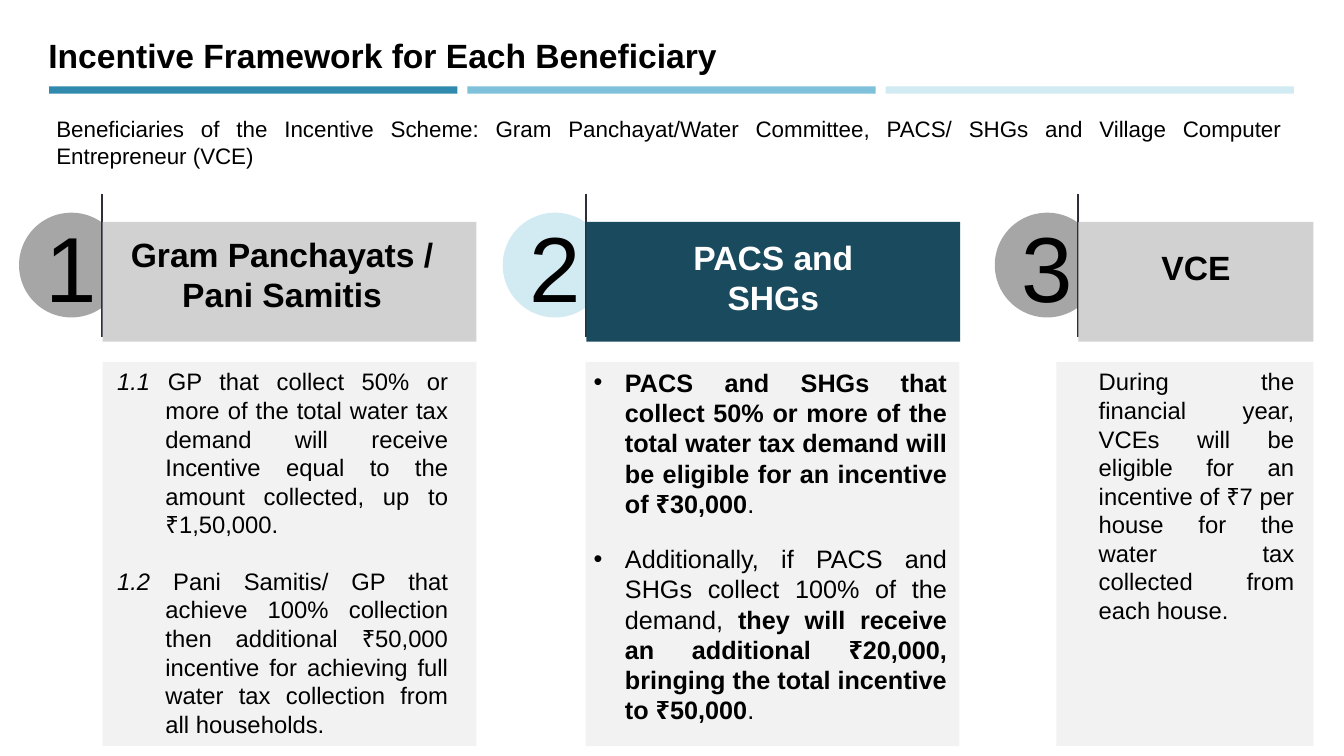
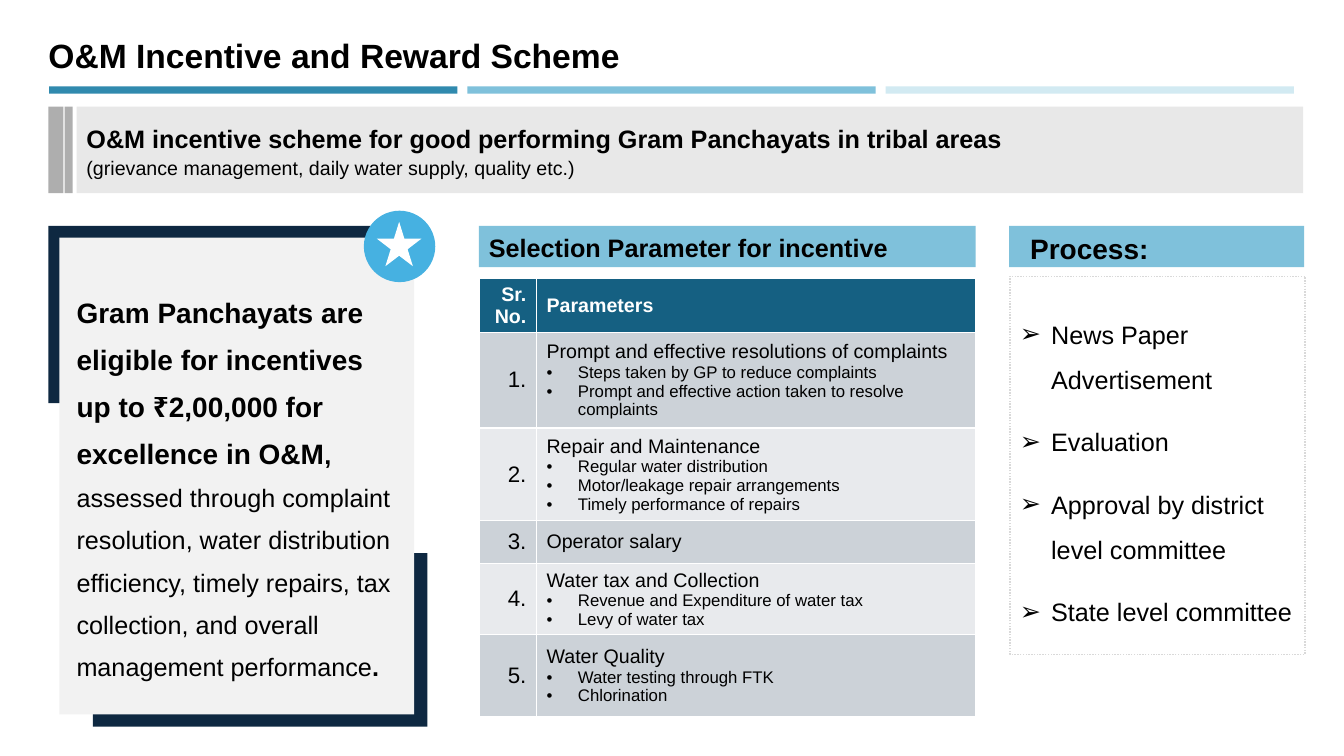
from math import copysign

from lxml import etree
from pptx import Presentation
from pptx import util as u
from pptx.dml import color as c
from pptx.enum import dml, shapes, text
from pptx.oxml import ns

INK, WHITE, PALE = "000000", "FFFFFF", "F2F2F2"
GREY, SILVER = "D1D1D1", "A6A6A6"
SKY, ICE = "7FC1DB", "D2EAF2"
BANDS = ["308AAE", SKY, ICE]
FONT = "Arial"
INSETS = (0.25, 0.13, 0.25, 0.13)
LEFT, CENTER, RIGHT, JUSTIFY = (
    text.PP_ALIGN.LEFT, text.PP_ALIGN.CENTER,
    text.PP_ALIGN.RIGHT, text.PP_ALIGN.JUSTIFY)
TOP, MIDDLE = text.MSO_ANCHOR.TOP, text.MSO_ANCHOR.MIDDLE
RECT, OVAL, STAR = (
    shapes.MSO_SHAPE.RECTANGLE, shapes.MSO_SHAPE.OVAL,
    shapes.MSO_SHAPE.STAR_5_POINT)


def rgb(code):
    return c.RGBColor.from_string(code)


def cm(*values):
    return [u.Cm(value) for value in values]


class Deck:
    def __init__(self):
        self.prs = Presentation()
        self.prs.slide_width, self.prs.slide_height = cm(33.87, 19.05)
        self.layout = self.prs.slide_layouts[1]
        self.place(self.layout.placeholders[0], 0.97, 0.74, 31.65, 1.27)
        self.slide = None

    def start_slide(self, heading):
        self.slide = self.prs.slides.add_slide(self.layout)
        frame = self.frame(self.slide.shapes.title.text_frame)
        self.paragraph(frame, heading, 24, bold=True)

    def share_bands(self):
        for index, fill in enumerate(BANDS):
            band = self.shape(1.24 + 10.54 * index, 2.18, 10.29, 0.18, fill)
            band.element.nvSpPr.cNvPr.set("id", str(20 + index))
            self.layout.shapes.element.append(band.element)

    def place(self, shape, x, y, w, h):
        shape.left, shape.top, shape.width, shape.height = cm(x, y, w, h)

    def paint(self, shape, fill):
        shape.fill.solid()
        shape.fill.fore_color.rgb = rgb(fill)

    def frame(self, frame, anchor=MIDDLE, insets=INSETS, wrap=True):
        frame.auto_size = text.MSO_AUTO_SIZE.NONE
        frame.word_wrap = wrap
        frame.vertical_anchor = anchor
        (frame.margin_left, frame.margin_top,
         frame.margin_right, frame.margin_bottom) = cm(*insets)
        return frame

    def shape(self, x, y, w, h, fill, kind=RECT):
        shape = self.slide.shapes.add_shape(kind, *cm(x, y, w, h))
        shape.shadow.inherit = False
        shape.line.fill.background()
        self.paint(shape, fill)
        return shape

    def box(self, x, y, w, h, fill, kind=RECT, **style):
        return self.frame(self.shape(x, y, w, h, fill, kind).text_frame, **style)

    def text_box(self, x, y, w, h):
        box = self.slide.shapes.add_textbox(*cm(x, y, w, h))
        return self.frame(box.text_frame, TOP)

    def body(self, x, y, w, h, fill=None, border=None, **style):
        body = self.slide.placeholders[1]
        self.place(body, x, y, w, h)
        if fill:
            self.paint(body, fill)
        if border:
            body.line.color.rgb = rgb(border)
            body.line.width = u.Pt(1)
            body.line.dash_style = dml.MSO_LINE.ROUND_DOT
        return self.frame(body.text_frame, **style)

    def rule(self, x, top, bottom):
        line = self.slide.shapes.add_connector(
            shapes.MSO_CONNECTOR.STRAIGHT, *cm(x, bottom, x, top))
        line.line.color.rgb = rgb("2E2E38")
        line.line.width = u.Pt(1.5)
        etree.SubElement(line.element.spPr, ns.qn("a:effectLst"))

    def bracket(self, x, y, w, h, fill):
        side, edge = copysign(1.14, w), copysign(0.56, h)
        corners = [(x + w, y), (x + w, y + edge), (x + side, y + edge),
                   (x + side, y + h), (x, y + h)]
        builder = self.slide.shapes.build_freeform(*cm(x, y))
        builder.add_line_segments([cm(*corner) for corner in corners])
        bracket = builder.convert_to_shape()
        bracket.shadow.inherit = False
        bracket.line.fill.background()
        self.paint(bracket, fill)

    def paragraph(self, frame, runs, size, bold=False, color=INK, align=LEFT,
                  spacing=1.0, before=0, after=0, hang=0, bullet=None):
        para = frame.paragraphs[-1]
        if para.runs:
            para = frame.add_paragraph()
        para.alignment = align
        para.line_spacing = spacing
        para.space_before, para.space_after = u.Pt(before), u.Pt(after)
        props = para._p.get_or_add_pPr()
        props.set("marL", str(u.Cm(hang)))
        props.set("indent", str(-u.Cm(hang)))
        if bullet:
            etree.SubElement(props, ns.qn("a:buFont")).set("typeface", FONT)
            etree.SubElement(props, ns.qn("a:buChar")).set("char", bullet)
        else:
            etree.SubElement(props, ns.qn("a:buNone"))
        for words, own in [(runs, {})] if isinstance(runs, str) else runs:
            run = para.add_run()
            run.text = words
            run.font.name = FONT
            run.font.size = u.Pt(own.get("size", size))
            run.font.bold = own.get("bold", bold)
            run.font.italic = own.get("italic", False)
            run.font.color.rgb = rgb(color)

    def table(self, x, y, widths, heights, header, rows):
        grid = self.slide.shapes.add_table(
            len(heights), len(widths),
            *cm(x, y, sum(widths), sum(heights))).table
        grid.horz_banding = False
        for column, width in zip(grid.columns, widths):
            column.width = u.Cm(width)
        for row, height in zip(grid.rows, heights):
            row.height = u.Cm(height)
        for index, label in enumerate(header):
            frame = self.cell(grid.cell(0, index), "156082")
            self.paragraph(frame, label, 14, True, WHITE, LEFT if index else RIGHT)
        for number, (parameter, details) in enumerate(rows, 1):
            fill = "CCD2D8" if number % 2 else "E8EAED"
            frame = self.cell(grid.cell(number, 0), fill)
            self.paragraph(frame, f"{number}.", 16, align=RIGHT)
            frame = self.cell(grid.cell(number, 1), fill)
            self.paragraph(frame, parameter, 14)
            for detail in details:
                self.paragraph(frame, detail, 12, hang=0.79, bullet="•")

    def cell(self, cell, fill):
        self.paint(cell, fill)
        cell.vertical_anchor = MIDDLE
        return cell.text_frame


def framework(deck):
    deck.start_slide("Incentive Framework for Each Beneficiary")
    deck.share_bands()
    intro = deck.text_box(1.17, 2.77, 31.39, 3.02)
    deck.paragraph(
        intro, "Beneficiaries of the Incentive Scheme: Gram Panchayat/Water "
        "Committee, PACS/ SHGs and Village Computer Entrepreneur (VCE)",
        16, align=JUSTIFY)

    beneficiaries = [
        (2.59, 9.42, SILVER, GREY, INK, (0, 0.3, 0.38, 0),
         ["Gram Panchayats /", "Pani Samitis"]),
        (14.78, 9.42, ICE, "1A4A5D", WHITE, (0, 0.38, 0, 0), ["PACS and", "SHGs"]),
        (27.18, 5.92, SILVER, GREY, INK, (0, 0.64, 0, 0), ["VCE"]),
    ]
    for number, (x, width, disc, fill, ink, insets, names) in enumerate(beneficiaries, 1):
        badge = deck.box(x - 2.11, 5.36, 2.64, 2.64, disc, OVAL,
                         insets=(0, 0, 0, 0), wrap=False)
        deck.paragraph(badge, str(number), 66, align=CENTER)
        deck.rule(x - 0.02, 4.88, 8.48)
        header = deck.box(x, 5.59, width, 3.02, fill, anchor=TOP, insets=insets)
        for name in names:
            deck.paragraph(header, name, 24, True, ink, CENTER)

    panel_top, panel_height = 9.12, 9.68
    panchayats = deck.box(2.59, panel_top, 9.42, panel_height, PALE,
                          anchor=TOP, insets=(0.36, 0.13, 0.71, 0.13))
    clauses = [
        ("1.1", " GP that collect 50% or more of the total water tax demand "
         "will receive Incentive equal to the amount collected, up to ₹1,50,000."),
        ("1.2", " Pani Samitis/ GP that achieve 100% collection then additional "
         "₹50,000 incentive for achieving full water tax collection from all "
         "households."),
    ]
    for index, (clause, terms) in enumerate(clauses):
        deck.paragraph(panchayats, [(clause, {"italic": True}), (terms, {})], 17,
                       align=JUSTIFY, hang=1.22, before=20 * index)

    pacs = deck.body(14.76, panel_top, 9.42, panel_height, PALE,
                     anchor=TOP, insets=(0.2, 0.13, 0.31, 0.13))
    strong = {"bold": True}
    rewards = [
        [("PACS and SHGs that collect 50% or more of the total water tax demand "
          "will be eligible for an incentive of ₹30,000", strong), (".", {})],
        [("Additionally, if PACS and SHGs collect 100% of the demand, ", {}),
         ("they will receive an additional ₹20,000, bringing the total incentive "
          "to ₹50,000", strong), (".", {})],
    ]
    for index, reward in enumerate(rewards):
        deck.paragraph(pacs, reward, 18, align=JUSTIFY, hang=0.79,
                       before=18 * index, bullet="•")

    vce = deck.box(26.62, panel_top, 6.48, panel_height, PALE,
                   anchor=TOP, insets=(1.07, 0.13, 0.48, 0.13))
    deck.paragraph(
        vce, "During the financial year, VCEs will be eligible for an incentive "
        "of ₹7 per house for the water tax collected from each house.",
        17, align=JUSTIFY)


def reward_scheme(deck):
    deck.start_slide("O&M Incentive and Reward Scheme")
    for x, width in [(1.22, 0.38), (1.63, 0.2)]:
        deck.shape(x, 2.69, width, 2.18, "AEAEAE")
    banner = deck.box(1.93, 2.69, 30.91, 2.18, "E8E8E8")
    deck.paragraph(
        banner, "O&M incentive scheme for good performing Gram Panchayats in "
        "tribal areas", 18, True, spacing=1.1)
    deck.paragraph(banner, "(grievance management, daily water supply, quality etc.)",
                   14, spacing=1.1)

    deck.bracket(10.77, 18.31, -8.43, -4.37, "0E2841")
    deck.bracket(1.22, 5.69, 8.61, 4.47, "0E2841")
    eligibility = deck.box(1.5, 5.99, 8.94, 12.01, PALE, anchor=TOP,
                           insets=(0.43, 1.12, 0.25, 0.13))
    deck.paragraph(eligibility, [
        ("Gram Panchayats are eligible for incentives up to ₹2,00,000 for "
         "excellence in O&M", {"size": 20, "bold": True}),
        (", ", {"bold": True}),
        ("assessed through complaint resolution, water distribution efficiency, "
         "timely repairs, tax collection, and overall management performance", {}),
        (".", {"bold": True}),
    ], 18, spacing=1.4)
    deck.shape(9.17, 5.31, 1.8, 1.8, "46B1E1", OVAL)
    deck.shape(9.5, 5.59, 1.12, 1.12, WHITE, STAR)

    selection = deck.box(12.07, 5.69, 12.52, 1.04, SKY)
    deck.paragraph(selection, "Selection Parameter for incentive", 18, True, spacing=1.1)
    deck.table(
        12.07, 7.01, [1.45, 11.07], [1.27, 2.41, 2.34, 1.07, 1.8, 2.06],
        ["Sr. No.", "Parameters"], [
            ("Prompt and effective resolutions of complaints",
             ["Steps taken by GP to reduce complaints",
              "Prompt and effective action taken to resolve complaints"]),
            ("Repair and Maintenance",
             ["Regular water distribution", "Motor/leakage repair arrangements",
              "Timely performance of repairs"]),
            ("Operator salary", []),
            ("Water tax and Collection",
             ["Revenue and Expenditure of water tax", "Levy of water tax"]),
            ("Water Quality", ["Water testing through FTK", "Chlorination"]),
        ])

    process = deck.box(25.43, 5.69, 7.44, 1.04, SKY, insets=(0.53, 0.13, 0.25, 0.05))
    deck.paragraph(process, "Process:", 20, True)
    steps = deck.body(25.45, 6.96, 7.44, 9.53, border="D9D9D9")
    for step in ["News Paper Advertisement", "Evaluation",
                 "Approval by district level committee", "State level committee"]:
        deck.paragraph(steps, step, 18, spacing=1.5, after=12, hang=0.79, bullet="➢")


def main():
    deck = Deck()
    framework(deck)
    reward_scheme(deck)
    deck.prs.save("out.pptx")


if __name__ == "__main__":
    main()
